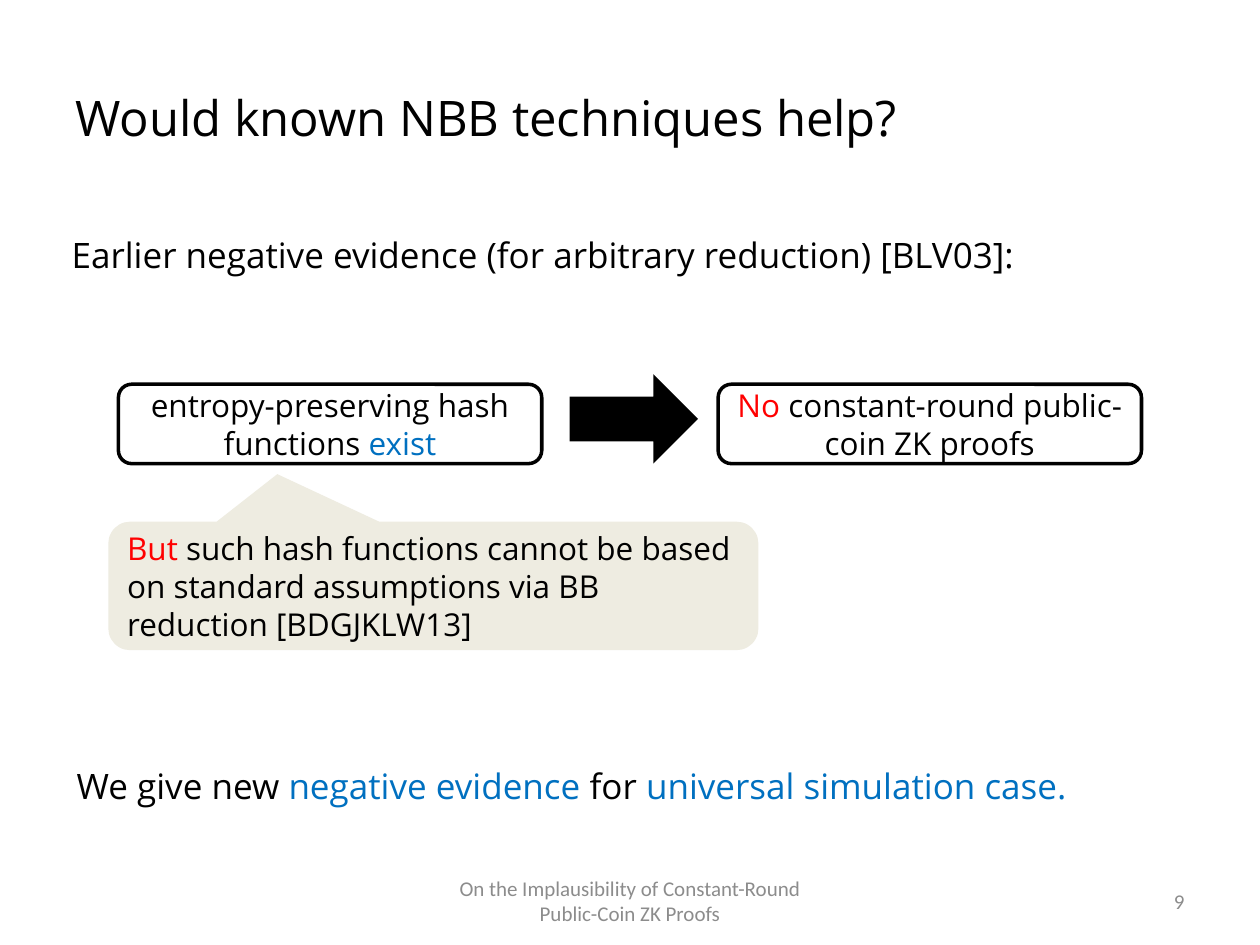
from pptx import Presentation
from pptx.dml.color import RGBColor
from pptx.enum.shapes import MSO_SHAPE
from pptx.enum.text import MSO_ANCHOR, PP_ALIGN
from pptx.util import Inches, Pt

COLORS = {
    "ink": "000000",
    "paper": "FFFFFF",
    "warning": "FF0000",
    "accent": "0070C0",
    "note": "EEECE1",
    "footer": "8C8C8C",
}


def color(name):
    return RGBColor.from_string(COLORS[name])


def write(holder, runs, size, align=PP_ALIGN.LEFT, anchor=MSO_ANCHOR.MIDDLE,
          font="Open Sans", space_before=0):
    frame = holder.text_frame
    for name, value in {"word_wrap": True, "vertical_anchor": anchor}.items():
        setattr(frame, name, value)
    paragraph = frame.paragraphs[0]
    for name, value in {"alignment": align, "space_before": Pt(space_before)}.items():
        setattr(paragraph, name, value)
    for words, ink in runs:
        run = paragraph.add_run()
        run.text = words
        for name, value in {"name": font, "size": Pt(size)}.items():
            setattr(run.font, name, value)
        run.font.color.rgb = color(ink)


def add_words(slide, box, runs, size, **layout):
    write(slide.shapes.add_textbox(*map(Inches, box)), runs, size, **layout)


def add_block(slide, preset, box, fill, outline=None):
    block = slide.shapes.add_shape(preset, *map(Inches, box))
    block.shadow.inherit = False
    block.fill.solid()
    block.fill.fore_color.rgb = color(fill)
    if outline:
        block.line.color.rgb = color(outline)
        block.line.width = Pt(2)
    else:
        block.line.fill.background()
    return block


def add_implication(slide, box, premise, conclusion):
    left, top, width, height = box
    claim_width = 3.36
    for claim_left, runs in ((left, premise), (left + width - claim_width, conclusion)):
        claim = add_block(slide, MSO_SHAPE.ROUNDED_RECTANGLE,
                          (claim_left, top, claim_width, height), "paper", "ink")
        write(claim, runs, 18, align=PP_ALIGN.CENTER)
    arrow_width, arrow_height = 1.02, 0.71
    add_block(slide, MSO_SHAPE.RIGHT_ARROW,
              (left + (width - arrow_width) / 2 + 0.03,
               top + (height - arrow_height) / 2 - 0.04,
               arrow_width, arrow_height), "ink")


def add_objection(slide, box, runs):
    callout = add_block(slide, MSO_SHAPE.ROUNDED_RECTANGULAR_CALLOUT, box, "note")
    for index, value in enumerate((-0.24, -0.87, 0.17)):
        callout.adjustments[index] = value
    write(callout, runs, 18)


def add_footer(slide, box, talk, number):
    left, top, width, height = box
    talk_width, number_width = 3.17, 2.33
    add_words(slide, (left + (width - talk_width) / 2, top, talk_width, height),
              [(talk, "footer")], 12, align=PP_ALIGN.CENTER, font="Calibri")
    add_words(slide, (left + width - number_width, top, number_width, height),
              [(number, "footer")], 12, align=PP_ALIGN.RIGHT, font="Calibri")


def main():
    deck = Presentation()
    deck.slide_width, deck.slide_height = Inches(10), Inches(7.5)
    slide = deck.slides.add_slide(deck.slide_layouts[6])

    add_words(slide, (0.5, 0.3, 9, 1.25),
              [("Would known NBB techniques help?", "ink")], 28)
    add_words(slide, (0.47, 1.8, 8.99, 0.59),
              [("Earlier negative evidence (for arbitrary reduction) [BLV03]:", "ink")],
              20, anchor=MSO_ANCHOR.TOP, space_before=4)
    add_implication(
        slide, (0.94, 3.05, 8.12, 0.63),
        [("entropy-preserving hash functions ", "ink"), ("exist", "accent")],
        [("No ", "warning"), ("constant-round public-coin ZK proofs", "ink")])
    add_objection(
        slide, (0.86, 4.14, 5.16, 1.02),
        [("But ", "warning"),
         ("such hash functions cannot be based on standard assumptions "
          "via BB reduction [BDGJKLW13]", "ink")])
    add_words(slide, (0.51, 6.02, 8.82, 0.74),
              [("We give new ", "ink"), ("negative evidence", "accent"),
               (" for ", "ink"), ("universal simulation case.", "accent")],
              20, anchor=MSO_ANCHOR.TOP)
    add_footer(slide, (0.5, 6.95, 9, 0.4),
               "On the Implausibility of Constant-Round Public-Coin ZK Proofs", "9")

    deck.save("out.pptx")


if __name__ == "__main__":
    main()
